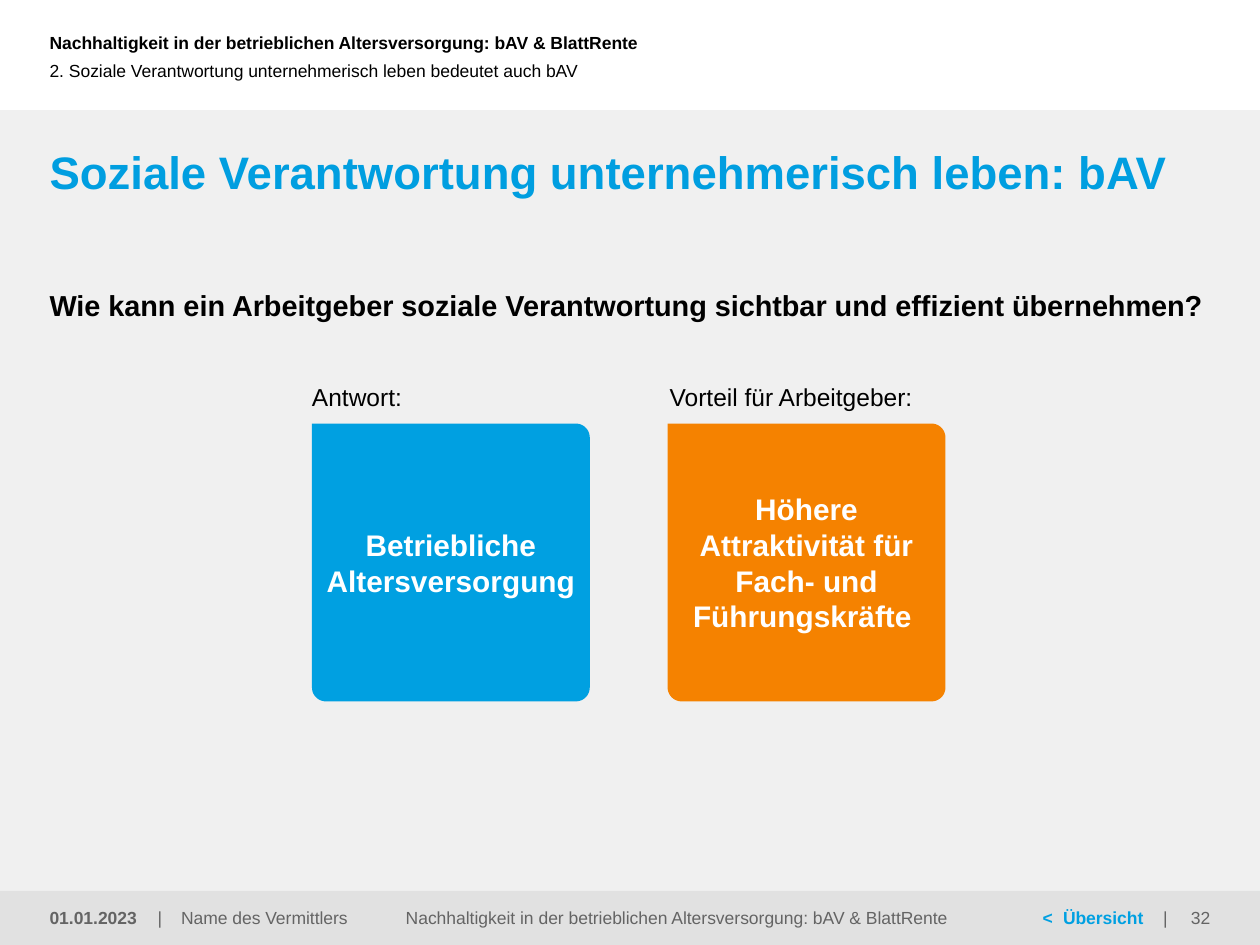
import math

from lxml import etree
from pptx import Presentation
from pptx.dml.color import RGBColor
from pptx.enum.shapes import MSO_SHAPE
from pptx.enum.text import MSO_ANCHOR, PP_ALIGN
from pptx.oxml.ns import qn
from pptx.util import Cm, Pt

RECTANGLE = MSO_SHAPE.RECTANGLE
TOP, MIDDLE, BOTTOM = MSO_ANCHOR.TOP, MSO_ANCHOR.MIDDLE, MSO_ANCHOR.BOTTOM
LEFT, CENTER, RIGHT = PP_ALIGN.LEFT, PP_ALIGN.CENTER, PP_ALIGN.RIGHT

FONT = "Arial"
BLACK = RGBColor(0x00, 0x00, 0x00)
WHITE = RGBColor(0xFF, 0xFF, 0xFF)
LIGHT_GRAY = RGBColor(0xF0, 0xF0, 0xF0)
FOOTER_GRAY = RGBColor(0xE1, 0xE1, 0xE1)
TEXT_GRAY = RGBColor(0x64, 0x64, 0x64)
TITLE_BLUE = RGBColor(0x00, 0x9E, 0xE0)
BLUE = RGBColor(0x00, 0xA0, 0xE1)
ORANGE = RGBColor(0xF5, 0x82, 0x00)

SLIDE_WIDTH, SLIDE_HEIGHT = 25.4, 19.05
MARGIN = 1.0
CONTENT_WIDTH = SLIDE_WIDTH - 2 * MARGIN
HEADER_HEIGHT = 2.22
FOOTER_HEIGHT = 1.09
TOPIC = "Nachhaltigkeit in der betrieblichen Altersversorgung: bAV & BlattRente"


def style_font(font, size, color, bold=False):
    font.name = FONT
    font.size = Pt(size)
    font.bold = bold
    font.color.rgb = color


def add_tab_stops(paragraph, positions):
    tab_list = etree.SubElement(paragraph._p.get_or_add_pPr(), qn("a:tabLst"))
    for position in positions:
        etree.SubElement(tab_list, qn("a:tab"), pos=str(Cm(position)), algn="l")


def add_text(shapes, box, text, size, color, bold=False, align=LEFT,
             anchor=MIDDLE, inset_left=0, inset_right=0, tabs=()):
    """Add a one-paragraph text box and return its paragraph."""
    text_box = shapes.add_textbox(*map(Cm, box))
    frame = text_box.text_frame
    frame.word_wrap = True
    frame.vertical_anchor = anchor
    frame.margin_left, frame.margin_right = Cm(inset_left), Cm(inset_right)
    frame.margin_top = frame.margin_bottom = 0
    paragraph = frame.paragraphs[0]
    paragraph.text = text
    paragraph.alignment = align
    if tabs:
        add_tab_stops(paragraph, tabs)
    if text:
        style_font(paragraph.font, size, color, bold)
    return paragraph


def fill_plain(shape, color):
    shape.shadow.inherit = False
    shape.fill.solid()
    shape.fill.fore_color.rgb = color
    shape.line.fill.background()


def add_band(slide, top, height, color):
    band = slide.shapes.add_shape(RECTANGLE, 0, Cm(top), Cm(SLIDE_WIDTH), Cm(height))
    fill_plain(band, color)


def add_header(slide, top):
    add_text(slide.shapes, (0, top, 17.73, 1.7), TOPIC, 10, BLACK, bold=True,
             inset_left=MARGIN)
    add_text(slide.shapes, (0, top + 0.63, 18.16, 1.6),
             "2. Soziale Verantwortung unternehmerisch leben bedeutet auch bAV",
             10, BLACK, inset_left=MARGIN)


def add_headings(slide, left, top, width):
    add_text(slide.shapes, (left, top, width, 1.4),
             "Soziale Verantwortung unternehmerisch leben: bAV",
             26, TITLE_BLUE, bold=True, anchor=TOP)
    add_text(slide.shapes, (left, top + 2.9, width, 0.7),
             "Wie kann ein Arbeitgeber soziale Verantwortung sichtbar und effizient übernehmen?",
             16.5, BLACK, bold=True, anchor=TOP)


def card_outline(left, top, size, radius, steps=12):
    """Points of a square whose corners are all rounded except the top left."""
    near, far = radius, size - radius
    points = [(left, top)]
    for center_x, center_y, start in ((far, near, -90), (far, far, 0), (near, far, 90)):
        for step in range(steps + 1):
            angle = math.radians(start + 90 * step / steps)
            points.append((left + center_x + radius * math.cos(angle),
                           top + center_y + radius * math.sin(angle)))
    return [(Cm(x), Cm(y)) for x, y in points]


def add_card(slide, left, top, size, label, label_offset, text, color):
    group = slide.shapes.add_group_shape()

    # Coloured card with centred text
    start, *points = card_outline(left, top, size, radius=0.28)
    builder = group.shapes.build_freeform(*start)
    builder.add_line_segments(points, close=True)
    card = builder.convert_to_shape()
    fill_plain(card, color)
    frame = card.text_frame
    frame.word_wrap = True
    frame.vertical_anchor = MIDDLE
    paragraph = frame.paragraphs[0]
    paragraph.text = text
    paragraph.alignment = CENTER
    style_font(paragraph.font, 17, WHITE, bold=True)

    # Label above the card
    add_text(group.shapes, (left + label_offset, top - 0.84, size, 0.6),
             label, 14, BLACK, anchor=BOTTOM)


def add_footer(slide, top, height):
    shapes = slide.shapes
    add_band(slide, top, height, FOOTER_GRAY)

    # Date and agent
    add_text(shapes, (0, top, 3.1, height), "01.01.2023", 10, TEXT_GRAY, bold=True,
             inset_left=MARGIN)
    add_text(shapes, (3.18, top, 6.15, height), "|\tName des Vermittlers",
             10, TEXT_GRAY, tabs=[0.47])

    # Topic
    add_text(shapes, (7.54, top, 12.19, height), TOPIC, 10, TEXT_GRAY, align=CENTER)

    # Overview mark and slide number
    overview = add_text(shapes, (17.48, top, 6.15, height), "", 10, BLUE,
                        inset_left=3.54, tabs=[0.41, 2.43])
    for text, color, bold in (("<\tÜbersicht", BLUE, True), ("\t|", TEXT_GRAY, False)):
        run = overview.add_run()
        run.text = text
        style_font(run.font, 10, color, bold)
    add_text(shapes, (23.01, top, SLIDE_WIDTH - 23.01, height), "32", 10, TEXT_GRAY,
             align=RIGHT, inset_right=MARGIN)


def main():
    presentation = Presentation()
    presentation.slide_width = Cm(SLIDE_WIDTH)
    presentation.slide_height = Cm(SLIDE_HEIGHT)
    slide = presentation.slides.add_slide(presentation.slide_layouts[6])

    add_band(slide, HEADER_HEIGHT, SLIDE_HEIGHT - HEADER_HEIGHT, LIGHT_GRAY)
    add_header(slide, 0)
    add_headings(slide, MARGIN, 2.9, CONTENT_WIDTH)

    cards = (
        ("Antwort:", 0, "Betriebliche Altersversorgung ", BLUE),
        ("Vorteil für Arbeitgeber:", 0.04,
         "Höhere Attraktivität für Fach- und Führungskräfte ", ORANGE),
    )
    for index, card in enumerate(cards):
        add_card(slide, 6.29 + index * 7.17, 8.54, 5.6, *card)

    add_footer(slide, SLIDE_HEIGHT - FOOTER_HEIGHT, FOOTER_HEIGHT)
    presentation.save("out.pptx")


if __name__ == "__main__":
    main()
